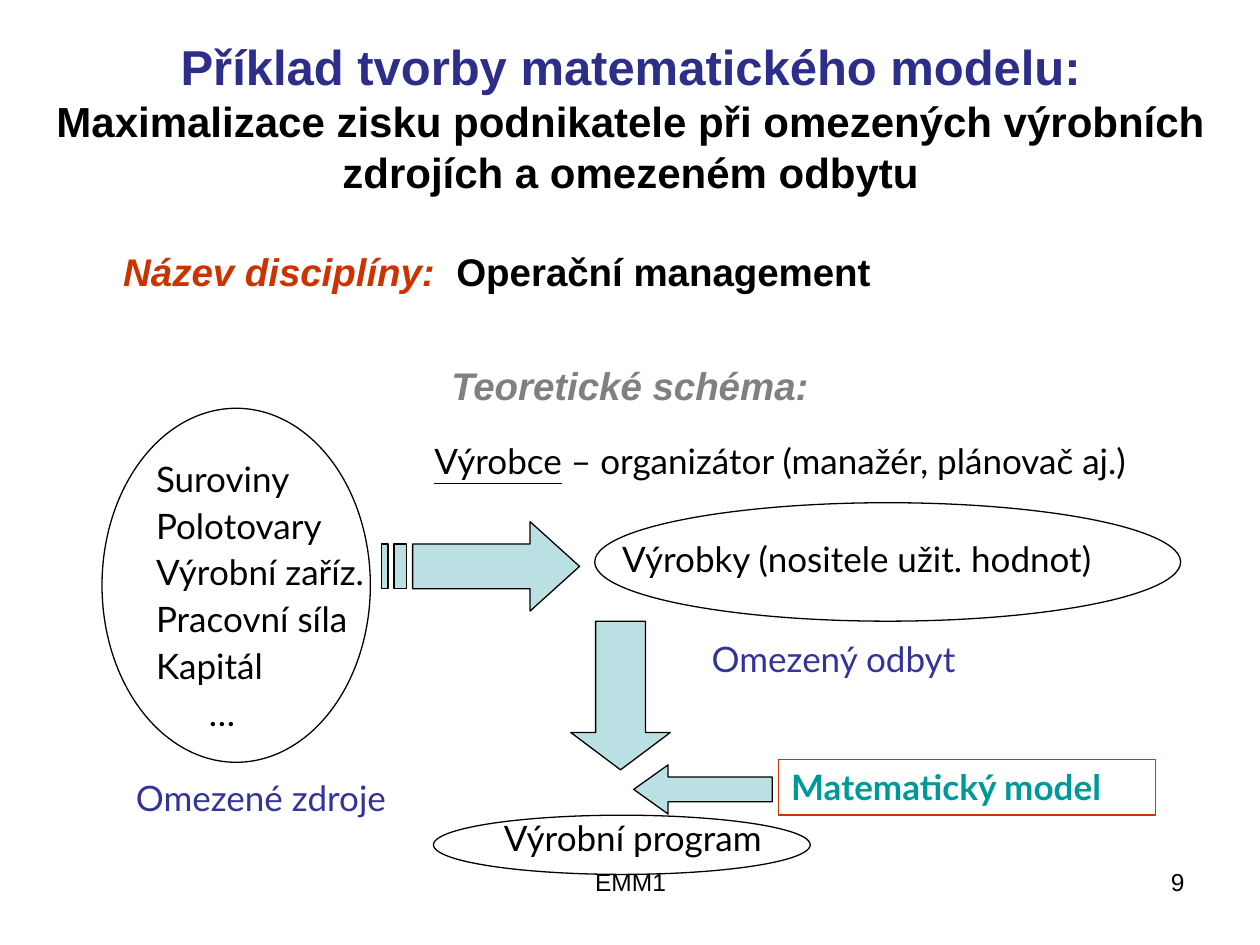
import pptx
import pptx.util
import pptx.dml.color
import pptx.enum.shapes
import pptx.enum.text

CELL = 0.1  # inches: the slide is a grid of 100 columns by 75 rows
COLORS = {"black": "000000", "navy": "2D2D8A", "blue": "333399", "red": "CC3300",
          "gray": "808080", "teal": "009999", "arrow": "BBE0E3"}
SHAPES = pptx.enum.shapes.MSO_SHAPE
ALIGN = pptx.enum.text.PP_ALIGN
ANCHOR = pptx.enum.text.MSO_ANCHOR
LATO = {"name": "Lato", "size": pptx.util.Pt(20)}


def arial(size, **extra):
    return {"name": "Arial", "size": pptx.util.Pt(size), **extra}


def grid(cells):
    return pptx.util.Inches(cells * CELL)


def place(region, part):
    """Turn a part, in cells from the region's corner, into slide lengths."""
    left, top, width, height = part
    return [grid(cells) for cells in (region[0] + left, region[1] + top, width, height)]


def rgb(color):
    return pptx.dml.color.RGBColor.from_string(COLORS[color])


def set_all(target, values):
    for name, value in values.items():
        setattr(target, name, value)


def add_run(paragraph, text, font, color="black"):
    run = paragraph.add_run()
    run.text = text
    set_all(run.font, font)
    run.font.color.rgb = rgb(color)


def indent(paragraph, cells):
    paragraph._p.get_or_add_pPr().set("marL", str(grid(cells)))


def add_text(slide, region, part, runs=(), align=ALIGN.LEFT, **frame_format):
    """Add a wrapped text box; return its text frame."""
    frame = slide.shapes.add_textbox(*place(region, part)).text_frame
    set_all(frame, {"word_wrap": True, **frame_format})
    paragraph = frame.paragraphs[0]
    paragraph.alignment = align
    for run in runs:
        add_run(paragraph, *run)
    return frame


def style(shape, fill=None, line="black"):
    shape.shadow.inherit = False
    if fill:
        shape.fill.solid()
        shape.fill.fore_color.rgb = rgb(fill)
    else:
        shape.fill.background()
    shape.line.color.rgb = rgb(line)
    shape.line.width = pptx.util.Pt(0.75)


def add_shape(slide, region, kind, part, adjustments=(), **colors):
    shape = slide.shapes.add_shape(kind, *place(region, part))
    for index, value in enumerate(adjustments):
        shape.adjustments[index] = value
    style(shape, **colors)
    return shape


def add_striped_arrow(slide, region, part):
    left, top, width, height = place(region, part)

    def bar(start, end):
        return [(start, 0.25), (start, 0.75), (end, 0.75), (end, 0.25)]

    head = [(0.75, 0), (0.75, 0.25), (5 / 32, 0.25), (5 / 32, 0.75),
            (0.75, 0.75), (0.75, 1), (1, 0.5)]
    builder = None
    for outline in (head, bar(2 / 32, 4 / 32), bar(0, 1 / 32)):
        points = [(left + x * width, top + y * height) for x, y in outline]
        if builder is None:
            builder = slide.shapes.build_freeform(*points[0])
        else:
            builder.move_to(*points[0])
        builder.add_line_segments(points[1:], close=True)
    style(builder.convert_to_shape(), fill="arrow")


def build_title(slide, region):
    frame = add_text(slide, region, (0, 0, *region[2:]),
                     [("Příklad tvorby matematického modelu:", arial(28, bold=True), "navy")],
                     ALIGN.CENTER, vertical_anchor=ANCHOR.MIDDLE)
    paragraph = frame.paragraphs[0]
    paragraph.add_line_break()
    add_run(paragraph, "Maximalizace zisku podnikatele při omezených výrobních "
            "zdrojích a omezeném odbytu", arial(24, bold=True))


def build_introduction(slide, region):
    bold = arial(22, bold=True)
    italic = {**bold, "italic": True}
    frame = add_text(slide, region, (0, 0, *region[2:]),
                     [("Název disciplíny:  ", italic, "red"), ("Operační management", bold)],
                     margin_top=grid(2.2))
    indent(frame.paragraphs[0], 3.8)
    heading = frame.add_paragraph()
    set_all(heading, {"alignment": ALIGN.CENTER, "space_before": pptx.util.Pt(38.7)})
    add_run(heading, "Teoretické schéma:", italic, "gray")


def build_resources(slide, region):
    add_shape(slide, region, SHAPES.OVAL, (0, 0, 21.3, 28.1))
    frame = add_text(slide, region, (3.3, 4.3, 26, 23.6))
    items = ["Suroviny", "Polotovary", "Výrobní zaříz.", "Pracovní síla", "Kapitál", "…"]
    for index, item in enumerate(items):
        paragraph = frame.add_paragraph() if index else frame.paragraphs[0]
        set_all(paragraph, {"line_spacing": 0.7, "space_before": pptx.util.Pt(10 if index else 0)})
        add_run(paragraph, item, LATO)
    indent(frame.paragraphs[-1], 4.2)
    add_text(slide, region, (1.7, 28.7, 22, 4.3), [("Omezené zdroje", LATO, "blue")])


def build_products(slide, region):
    add_text(slide, region, (3.2, 0, 60.6, 4.3),
             [("Výrobce", {**LATO, "underline": True}),
              (" – organizátor (manažér, plánovač aj.)", LATO)])
    add_striped_arrow(slide, region, (0, 7, 15.7, 7.1))
    add_shape(slide, region, SHAPES.OVAL, (16.9, 5.5, 46.5, 9.4))
    add_text(slide, region, (18.1, 7.8, 41, 4.3), [("Výrobky (nositele užit. hodnot)", LATO)])
    add_text(slide, region, (25.2, 15.7, 22, 4.3), [("Omezený odbyt", LATO, "blue")])


def build_program(slide, region):
    add_shape(slide, region, SHAPES.DOWN_ARROW, (10.9, 0, 7.9, 11.8), (0.5, 0.375), fill="arrow")
    add_shape(slide, region, SHAPES.LEFT_ARROW, (15.9, 11.4, 11, 3.9), (0.5, 0.7), fill="arrow")
    model = add_shape(slide, region, SHAPES.RECTANGLE, (27.4, 11, 29.9, 4.4), line="red")
    set_all(model.text_frame, {"vertical_anchor": ANCHOR.TOP, "word_wrap": True})
    paragraph = model.text_frame.paragraphs[0]
    paragraph.alignment = ALIGN.LEFT
    add_run(paragraph, "Matematický model", {**LATO, "bold": True}, "teal")
    add_text(slide, region, (4.6, 15, 28.4, 4.3), [("Výrobní program", LATO)])
    add_shape(slide, region, SHAPES.OVAL, (0, 15.4, 29.9, 4.7))


def build_footer(slide, region):
    height = region[3]
    add_text(slide, region, (0, 0, 31.7, height), [("EMM1", arial(14))], ALIGN.CENTER)
    add_text(slide, region, (37.5, 0, 23.3, height), [("9", arial(14))], ALIGN.RIGHT)


def main():
    presentation = pptx.Presentation()
    presentation.slide_width, presentation.slide_height = grid(100), grid(75)
    slide = presentation.slides.add_slide(presentation.slide_layouts[6])
    # Regions: left, top, width and height in grid cells
    build_footer(slide, (34.2, 68.3, 60.8, 5.2))
    build_title(slide, (2, 3, 96.1, 12.5))
    build_introduction(slide, (5, 17.5, 90, 49.5))
    build_resources(slide, (8.1, 32.4, 29.3, 33))
    build_products(slide, (30.3, 34.4, 63.8, 20))
    build_program(slide, (34.4, 49.3, 57.3, 20.1))
    presentation.save("out.pptx")


if __name__ == "__main__":
    main()
